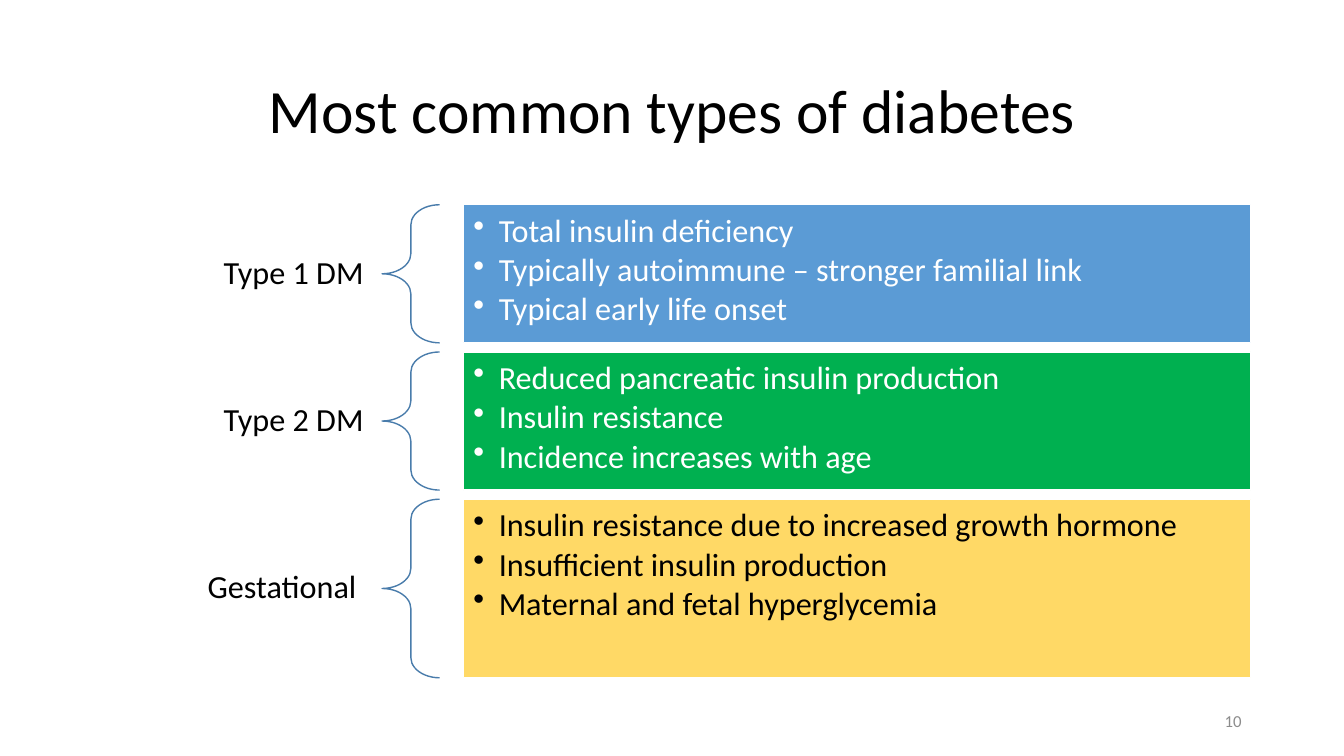
"""Build a slide that compares the most common types of diabetes."""
from dataclasses import dataclass

from lxml import etree
from pptx import Presentation
from pptx.dml.color import RGBColor
from pptx.enum.shapes import MSO_SHAPE
from pptx.enum.text import MSO_ANCHOR, PP_ALIGN
from pptx.oxml.ns import qn
from pptx.shapes.autoshape import Shape
from pptx.slide import Slide
from pptx.text.text import TextFrame
from pptx.util import Cm, Pt

RECTANGLE = MSO_SHAPE.RECTANGLE
LEFT_BRACE = MSO_SHAPE.LEFT_BRACE
TOP, MIDDLE = MSO_ANCHOR.TOP, MSO_ANCHOR.MIDDLE
LEFT, CENTER, RIGHT = PP_ALIGN.LEFT, PP_ALIGN.CENTER, PP_ALIGN.RIGHT


@dataclass(frozen=True)
class Theme:
    """Colours and type sizes of the slide."""

    font: str = "Calibri"
    dark: str = "000000"
    light: str = "FFFFFF"
    muted: str = "8C8C8C"
    brace: str = "497CAB"
    blue: str = "5B9BD5"
    green: str = "00B050"
    yellow: str = "FFD966"
    title_size: float = 44
    body_size: float = 23
    number_size: float = 12


@dataclass(frozen=True)
class DiabetesType:
    """One row: a label, its panel and the facts in the panel."""

    label: str
    facts: tuple[str, ...]
    fill: str
    color: str
    height: float


THEME = Theme()
MARGIN, LABEL_WIDTH, LABEL_HEIGHT = 2.34, 7.29, 1.27
BRACE_LEFT, BRACE_WIDTH = MARGIN + LABEL_WIDTH, 1.45
PANEL_LEFT, PANEL_WIDTH = 11.68, 19.84
FIRST_TOP, ROW_GAP = 5.16, 0.23

DIABETES_TYPES = (
    DiabetesType("Type 1 DM", (
        "Total insulin deficiency",
        "Typically autoimmune – stronger familial link",
        "Typical early life onset",
    ), THEME.blue, THEME.light, 3.48),
    DiabetesType("Type 2 DM", (
        "Reduced pancreatic insulin production",
        "Insulin resistance",
        "Incidence increases with age",
    ), THEME.green, THEME.light, 3.48),
    DiabetesType("Gestational ", (
        "Insulin resistance due to increased growth hormone",
        "Insufficient insulin production",
        "Maternal and fetal hyperglycemia",
    ), THEME.yellow, THEME.dark, 4.5),
)


def write_text(frame: TextFrame, *lines: str, size: float = THEME.body_size,
               color: str = THEME.dark, align: PP_ALIGN = LEFT,
               anchor: MSO_ANCHOR = MIDDLE, inset: tuple[float, float] = (0.25, 0.13),
               line_spacing: float = 0.9, space_after: float = 0,
               bulleted: bool = False) -> None:
    """Write one paragraph per line in the given format."""
    frame.word_wrap = True
    frame.vertical_anchor = anchor
    frame.margin_left = frame.margin_right = Cm(inset[0])
    frame.margin_top = frame.margin_bottom = Cm(inset[1])
    for index, line in enumerate(lines):
        paragraph = frame.add_paragraph() if index else frame.paragraphs[0]
        paragraph.alignment = align
        paragraph.line_spacing = line_spacing
        paragraph.space_after = Pt(space_after)
        run = paragraph.add_run()
        run.text = line
        run.font.name = THEME.font
        run.font.size = Pt(size)
        run.font.color.rgb = RGBColor.from_string(color)
        if bulleted:
            properties = paragraph._p.get_or_add_pPr()
            properties.set("marL", str(Cm(0.64)))
            properties.set("indent", str(-Cm(0.64)))
            etree.SubElement(properties, qn("a:buChar")).set("char", "•")


def add_text_box(slide: Slide, left: float, top: float, width: float,
                 height: float) -> TextFrame:
    """Add a text box and return its text frame."""
    return slide.shapes.add_textbox(Cm(left), Cm(top), Cm(width), Cm(height)).text_frame


def add_outlined_shape(slide: Slide, kind: MSO_SHAPE, left: float, top: float,
                       width: float, height: float, line: str) -> Shape:
    """Add a preset shape with a thin outline and no shadow or fill."""
    shape = slide.shapes.add_shape(kind, Cm(left), Cm(top), Cm(width), Cm(height))
    shape.shadow.inherit = False
    shape.fill.background()
    shape.line.color.rgb = RGBColor.from_string(line)
    shape.line.width = Pt(1)
    return shape


def draw_row(slide: Slide, row: DiabetesType, top: float) -> None:
    """Draw the label, brace and panel of one diabetes type."""
    label_top = top + (row.height - LABEL_HEIGHT) / 2
    label = add_text_box(slide, MARGIN, label_top, LABEL_WIDTH, LABEL_HEIGHT)
    write_text(label, row.label, align=RIGHT, inset=(0.46, 0.15))

    brace = add_outlined_shape(slide, LEFT_BRACE, BRACE_LEFT, top, BRACE_WIDTH,
                               row.height, THEME.brace)
    brace.adjustments[0] = 0.35
    brace.adjustments[1] = 0.5

    panel = add_outlined_shape(slide, RECTANGLE, PANEL_LEFT, top, PANEL_WIDTH,
                               row.height, THEME.light)
    panel.fill.solid()
    panel.fill.fore_color.rgb = RGBColor.from_string(row.fill)
    write_text(panel.text_frame, *row.facts, color=row.color, anchor=TOP,
               inset=(0.25, 0.25), space_after=3.2, bulleted=True)


def main() -> None:
    """Build and save the presentation."""
    presentation = Presentation()
    presentation.slide_width, presentation.slide_height = Cm(33.87), Cm(19.05)
    slide = presentation.slides.add_slide(presentation.slide_layouts[6])

    title = add_text_box(slide, MARGIN, 1.01, 29.21, 3.68)
    write_text(title, "Most common types of diabetes", size=THEME.title_size, align=CENTER)

    top = FIRST_TOP
    for row in DIABETES_TYPES:
        draw_row(slide, row, top)
        top += row.height + ROW_GAP

    number = add_text_box(slide, 23.92, 17.66, 7.62, 1.01)
    write_text(number, "10", size=THEME.number_size, color=THEME.muted, align=RIGHT,
               line_spacing=1.0)
    presentation.save("out.pptx")


if __name__ == "__main__":
    main()
